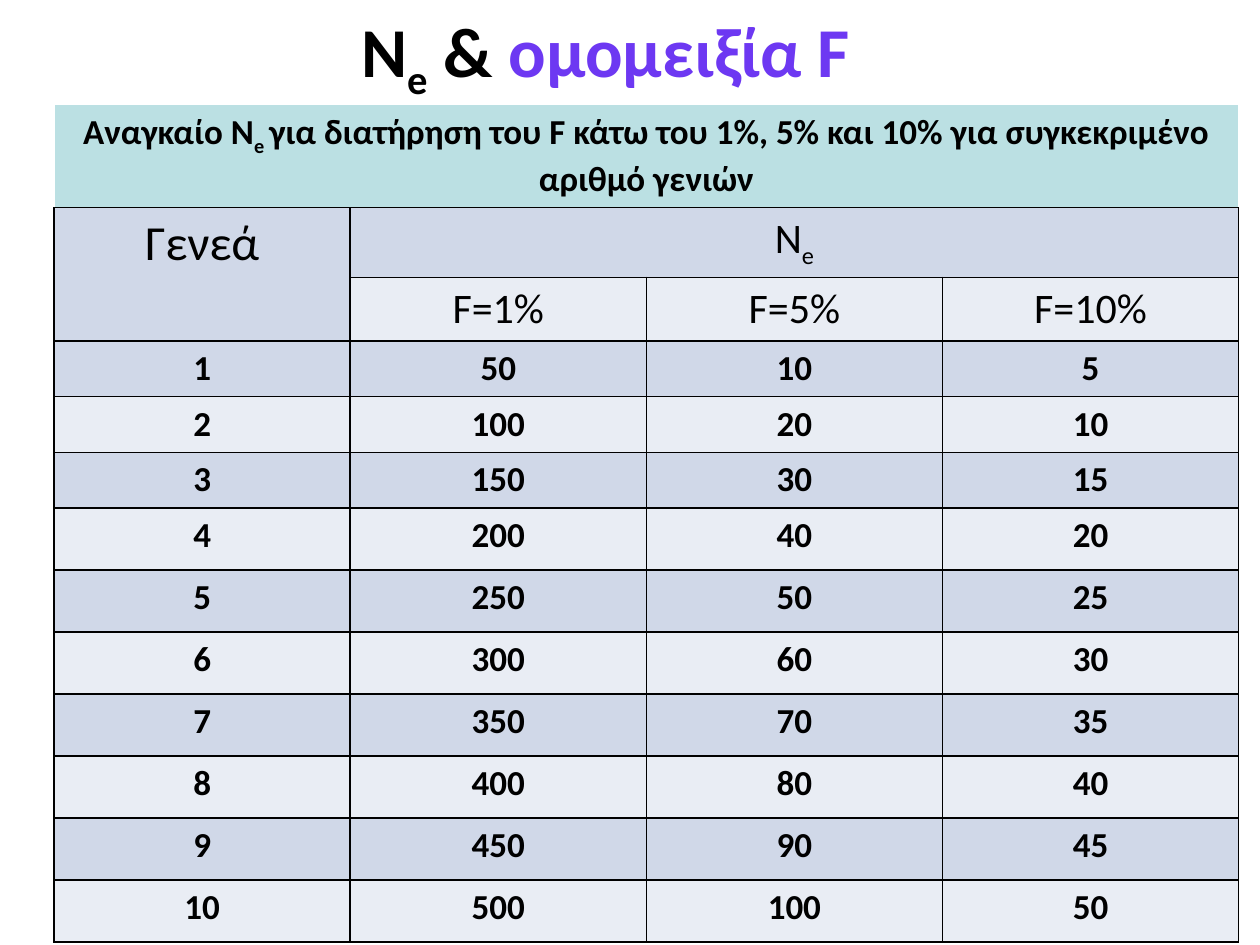
"""Build a slide with a table of the effective size needed to limit inbreeding."""
import dataclasses

import pptx
import pptx.dml.color
import pptx.enum.text
import pptx.oxml
import pptx.oxml.ns
import pptx.util
from pptx.util import Cm


@dataclasses.dataclass(frozen=True)
class Theme:
    font: str = "Calibri"
    ink: str = "000000"
    accent: str = "6D38F2"
    paper: str = "FFFFFF"
    banner: str = "BBE0E3"
    bands: tuple = ("D0D8E8", "E9EDF4")
    title_size: int = 40
    generation_size: int = 28
    header_size: int = 24
    body_size: int = 20
    rule_width: int = 1


theme = Theme()


def add_span(para, text, *, size=theme.body_size, bold=True, color=theme.ink, baseline=0):
    para.alignment = pptx.enum.text.PP_ALIGN.CENTER
    span = para.add_run()
    span.text = text
    span.font.name = theme.font
    span.font.size = pptx.util.Pt(size)
    span.font.bold = bold
    span.font.color.rgb = pptx.dml.color.RGBColor.from_string(color)
    if baseline:
        span.font._element.set("baseline", str(baseline * 1000))


def format_cell(cell, fill, borders):
    properties = cell._tc.get_or_add_tcPr()
    for side, color in zip("LRTB", borders):
        properties.append(pptx.oxml.parse_xml(
            f'<a:ln{side} {pptx.oxml.ns.nsdecls("a")} w="{pptx.util.Pt(theme.rule_width)}">'
            f'<a:solidFill><a:srgbClr val="{color}"/></a:solidFill></a:ln{side}>'))
    cell.fill.solid()
    cell.fill.fore_color.rgb = pptx.dml.color.RGBColor.from_string(fill)


deck = pptx.Presentation()
deck.slide_width, deck.slide_height = Cm(25.4), Cm(19.05)
page = deck.slides.add_slide(deck.slide_layouts[5])

title = page.shapes.title
title.left, title.top, title.width, title.height = Cm(1.09), Cm(0.08), Cm(22.86), Cm(2.06)
box = title.text_frame
box.auto_size = pptx.enum.text.MSO_AUTO_SIZE.NONE
box.vertical_anchor = pptx.enum.text.MSO_ANCHOR.MIDDLE
box.margin_right = Cm(0.89)
para = box.paragraphs[0]
add_span(para, "N", size=theme.title_size)
add_span(para, "e", size=theme.title_size, baseline=-25)
add_span(para, " & ", size=theme.title_size)
add_span(para, "ομομειξία F", size=theme.title_size, color=theme.accent)

percents = (1, 5, 10)
generations = range(1, 11)
row_heights = [2.01, 1.27, 1.27, 1.12, 1.09, 1.09] + [1.25] * 7
column_width = 5.97
column_count = 1 + len(percents)

table = page.shapes.add_table(
    len(row_heights), column_count, Cm(1.09), Cm(2.11),
    Cm(column_width * column_count), Cm(sum(row_heights))).table
for column in table.columns:
    column.width = Cm(column_width)
for row, height in zip(table.rows, row_heights):
    row.height = Cm(height)

for row_index, row in enumerate(table.rows):
    for cell in row.cells:
        if row_index == 0:
            format_cell(cell, theme.banner, [theme.paper] * 3 + [theme.ink])
        else:
            format_cell(cell, theme.bands[(row_index - 1) % 2], [theme.ink] * 4)

table.cell(0, 0).merge(table.cell(0, column_count - 1))
table.cell(1, 0).merge(table.cell(2, 0))
table.cell(1, 1).merge(table.cell(1, column_count - 1))

para = table.cell(0, 0).text_frame.paragraphs[0]
add_span(para, "Αναγκαίο N")
add_span(para, "e ", baseline=-25)
add_span(para, "για διατήρηση του F κάτω του 1%, 5% και 10% για συγκεκριμένο αριθμό γενιών")

para = table.cell(1, 0).text_frame.paragraphs[0]
add_span(para, "Γενεά", size=theme.generation_size, bold=False)

para = table.cell(1, 1).text_frame.paragraphs[0]
add_span(para, "Ν", size=theme.header_size, bold=False)
add_span(para, "e", size=theme.header_size, bold=False, baseline=-25)

for column_index, percent in enumerate(percents, start=1):
    para = table.cell(2, column_index).text_frame.paragraphs[0]
    add_span(para, f"F={percent}%", size=theme.header_size, bold=False)

for row_index, generation in enumerate(generations, start=3):
    values = [generation] + [50 * generation // percent for percent in percents]
    for column_index, value in enumerate(values):
        add_span(table.cell(row_index, column_index).text_frame.paragraphs[0], str(value))

deck.save("out.pptx")
